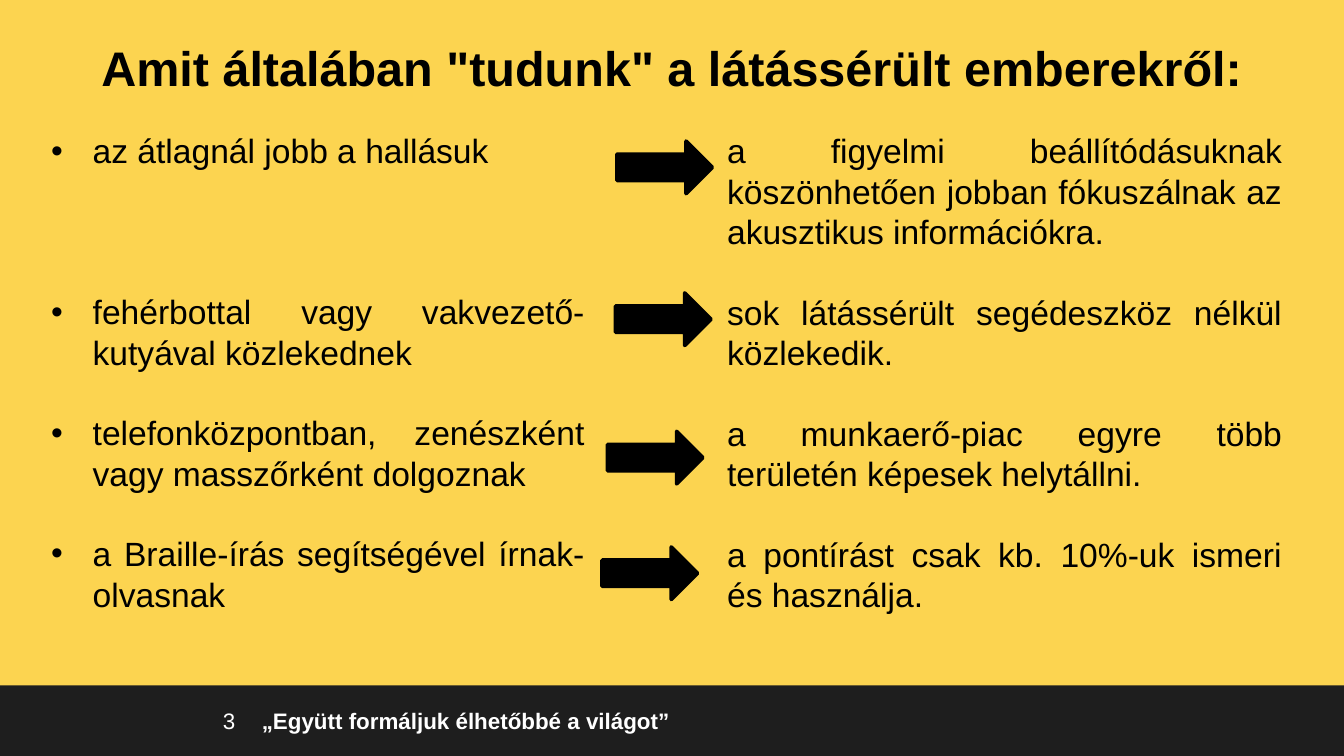
import pptx
import pptx.util
import pptx.dml.color
import pptx.enum.shapes
import pptx.enum.text
import pptx.oxml.ns
from dataclasses import dataclass
from lxml import etree

Inches = pptx.util.Inches
Pt = pptx.util.Pt
RGB = pptx.dml.color.RGBColor
ALIGN = pptx.enum.text.PP_ALIGN
ANCHOR = pptx.enum.text.MSO_ANCHOR
SHAPE = pptx.enum.shapes.MSO_SHAPE


@dataclass(frozen=True)
class Theme:
    background: RGB = RGB.from_string("FCD450")
    band: RGB = RGB.from_string("1E1E1E")
    ink: RGB = RGB.from_string("000000")
    footer_ink: RGB = RGB.from_string("FFFFFF")
    font: str = "Arial"
    title_size: float = 26
    body_size: float = 18
    footer_size: float = 12
    line_pitch: float = 21.56


THEME = Theme()

BELIEFS = [
    ("az átlagnál jobb a hallásuk", 0),
    ("fehérbottal vagy vakvezető-kutyával közlekednek", 3),
    ("telefonközpontban, zenészként vagy masszőrként dolgoznak", 1),
    ("a Braille-írás segítségével írnak-olvasnak", 1),
]
FACTS = [
    ("a figyelmi beállítódásuknak köszönhetően jobban fókuszálnak az akusztikus információkra.", 0),
    ("sok látássérült segédeszköz nélkül közlekedik.", 1),
    ("a munkaerő-piac egyre több területén képesek helytállni.", 1),
    ("a pontírást csak kb. 10%-uk ismeri és használja.", 1),
]
ARROW_SPOTS = [(0.11, 0.13), (0.10, 1.26), (0.04, 2.29), (0, 3.15)]


def place(shape, box):
    shape.left, shape.top, shape.width, shape.height = (Inches(v) for v in box)


def style(paragraph, size, color, align, bold=False):
    paragraph.alignment = align
    font = paragraph.font
    font.name, font.size, font.bold = THEME.font, Pt(size), bold
    font.color.rgb = color


def prepare_frame(frame, anchor):
    frame.word_wrap = True
    frame.auto_size = pptx.enum.text.MSO_AUTO_SIZE.NONE
    frame.vertical_anchor = anchor


def paint(shape, color):
    shape.shadow.inherit = False
    shape.fill.solid()
    shape.fill.fore_color.rgb = color


def set_bullet(paragraph, bullet):
    properties = paragraph._p.get_or_add_pPr()
    indent = Inches(0.31) if bullet else 0
    properties.set("marL", str(indent))
    properties.set("indent", str(-indent))
    tag = "a:buChar" if bullet else "a:buNone"
    mark = etree.SubElement(properties, pptx.oxml.ns.qn(tag))
    if bullet:
        mark.set("char", bullet)


def add_title(title, box, text):
    place(title, box)
    prepare_frame(title.text_frame, ANCHOR.TOP)
    title.text_frame.text = text
    style(title.text_frame.paragraphs[0], THEME.title_size, THEME.ink, ALIGN.CENTER, True)


def add_column(body, box, statements, bullet=None):
    place(body, box)
    frame = body.text_frame
    prepare_frame(frame, ANCHOR.TOP)
    frame.text = "\n".join(text for text, _ in statements)
    for paragraph, (_, lines_before) in zip(frame.paragraphs, statements):
        set_bullet(paragraph, bullet)
        paragraph.space_before = Pt(lines_before * THEME.line_pitch)
        paragraph.space_after = Pt(0)
        style(paragraph, THEME.body_size, THEME.ink, ALIGN.JUSTIFY)


def add_arrows(slide, box):
    left, top, width, height = box
    for dx, dy in ARROW_SPOTS:
        arrow = slide.shapes.add_shape(
            SHAPE.RIGHT_ARROW, Inches(left + dx), Inches(top + dy), Inches(width), Inches(height))
        paint(arrow, THEME.ink)
        arrow.line.color.rgb = THEME.ink
        arrow.line.width = Pt(2)


def add_footer(slide, box, number, motto):
    left, top, width, height = box
    band = slide.shapes.add_shape(SHAPE.RECTANGLE, *(Inches(v) for v in box))
    paint(band, THEME.band)
    band.line.fill.background()
    parts = [(motto, 1.85, 6.3, ALIGN.LEFT, True), (number, 0.91, 0.94, ALIGN.RIGHT, False)]
    for text, dx, part_width, align, bold in parts:
        label = slide.shapes.add_textbox(
            Inches(left + dx), Inches(top + 0.11), Inches(part_width), Inches(0.3))
        prepare_frame(label.text_frame, ANCHOR.MIDDLE)
        label.text_frame.text = text
        style(label.text_frame.paragraphs[0], THEME.footer_size, THEME.footer_ink, align, bold)


def main():
    deck = pptx.Presentation()
    deck.slide_width = Inches(10)
    deck.slide_height = deck.slide_width * 9 // 16
    slide = deck.slides.add_slide(deck.slide_layouts.get_by_name("Two Content"))
    slide.background.fill.solid()
    slide.background.fill.fore_color.rgb = THEME.background
    title, beliefs, facts = slide.placeholders
    add_footer(slide, (0, 5.1, 10, 0.53), "3", "„Együtt formáljuk élhetőbbé a világot”")
    add_title(title, (0.28, 0.23, 9.45, 0.94), 'Amit általában "tudunk" a látássérült emberekről:')
    add_column(facts, (5.31, 0.92, 4.33, 3.74), FACTS)
    add_column(beliefs, (0.28, 0.92, 4.17, 3.74), BELIEFS, "•")
    add_arrows(slide, (4.48, 0.92, 0.71, 0.39))
    deck.save("out.pptx")


if __name__ == "__main__":
    main()
